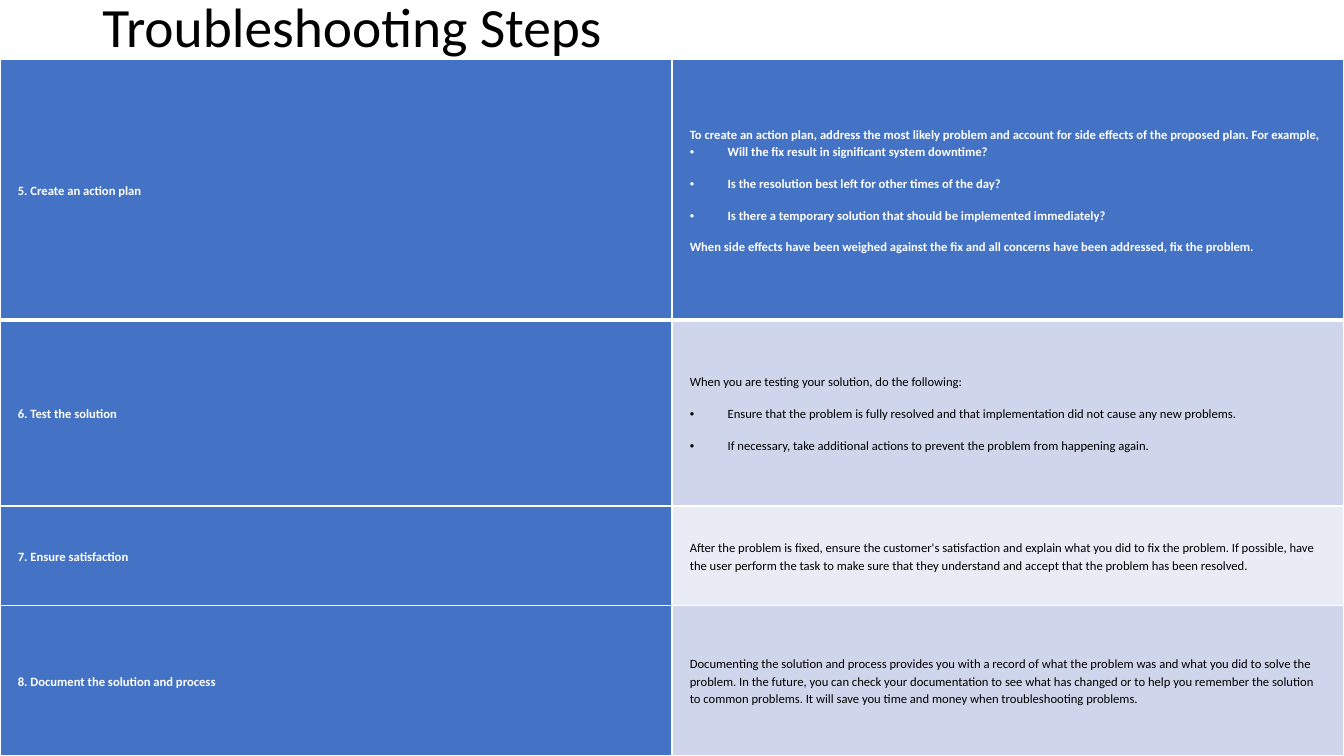
from lxml import etree
from pptx import Presentation
from pptx.dml.color import RGBColor
from pptx.enum.text import MSO_ANCHOR, MSO_AUTO_SIZE, PP_ALIGN
from pptx.oxml.ns import qn
from pptx.util import Emu, Pt

MIDDLE = MSO_ANCHOR.MIDDLE
NO_FIT = MSO_AUTO_SIZE.NONE
LEFT = PP_ALIGN.LEFT

FONT = "Calibri"
BLACK = RGBColor(0x00, 0x00, 0x00)
WHITE = RGBColor(0xFF, 0xFF, 0xFF)
BLUE = RGBColor(0x44, 0x72, 0xC4)
BAND_DARK = RGBColor(0xCF, 0xD5, 0xEA)
BAND_LIGHT = RGBColor(0xE9, 0xEB, 0xF5)

# Content: step name, then paragraphs of (text, is a bullet, points after)
TITLE = "Troubleshooting Steps"
STEPS = [
    ("5. Create an action plan", [
        ("To create an action plan, address the most likely problem and account for "
         "side effects of the proposed plan. For example,", False, 0),
        ("Will the fix result in significant system downtime?", True, 10),
        ("Is the resolution best left for other times of the day?", True, 10),
        ("Is there a temporary solution that should be implemented immediately?", True, 10),
        ("When side effects have been weighed against the fix and all concerns have "
         "been addressed, fix the problem.", False, 0),
    ]),
    ("6. Test the solution", [
        ("When you are testing your solution, do the following:", False, 10),
        ("Ensure that the problem is fully resolved and that implementation did not "
         "cause any new problems.", True, 10),
        ("If necessary, take additional actions to prevent the problem from happening "
         "again.", True, 10),
    ]),
    ("7. Ensure satisfaction", [
        ("After the problem is fixed, ensure the customer's satisfaction and explain "
         "what you did to fix the problem. If possible, have the user perform the task "
         "to make sure that they understand and accept that the problem has been "
         "resolved.", False, 0),
    ]),
    ("8. Document the solution and process", [
        ("Documenting the solution and process provides you with a record of what the "
         "problem was and what you did to solve the problem. In the future, you can "
         "check your documentation to see what has changed or to help you remember the "
         "solution to common problems. It will save you time and money when "
         "troubleshooting problems.", False, 0),
    ]),
]

# Layout in px, 96 to the inch
SLIDE_W, SLIDE_H = 1280, 720
TITLE_X, TITLE_W, TITLE_H = 88, 1104, 57
ROW_HEIGHTS = [248, 177, 95, 143]
MARGIN_X, MARGIN_Y = 17, 9
BULLET_INDENT = 36


def px(n):
    return Emu(n * 9525)


def style_runs(paragraph, size, color, bold):
    for run in paragraph.runs:
        run.font.name = FONT
        run.font.size = Pt(size)
        run.font.bold = bold
        run.font.color.rgb = color


def add_bullet(paragraph):
    props = paragraph._p.get_or_add_pPr()
    props.set("marL", str(px(BULLET_INDENT)))
    props.set("indent", str(-px(BULLET_INDENT)))
    etree.SubElement(props, qn("a:buFont"), typeface="Arial")
    etree.SubElement(props, qn("a:buChar"), char="•")


def set_borders(cell, top, bottom):
    props = cell._tc.get_or_add_tcPr()
    sides = [("a:lnL", 1), ("a:lnR", 1), ("a:lnT", top), ("a:lnB", bottom)]
    for position, (tag, width) in enumerate(sides):
        line = etree.Element(qn(tag), w=str(Pt(width)))
        fill = etree.SubElement(line, qn("a:solidFill"))
        etree.SubElement(fill, qn("a:srgbClr"), val=str(WHITE))
        props.insert(position, line)


def fill_cell(cell, paragraphs, background, color, bold):
    cell.fill.solid()
    cell.fill.fore_color.rgb = background
    cell.vertical_anchor = MIDDLE
    cell.margin_left = cell.margin_right = px(MARGIN_X)
    cell.margin_top = cell.margin_bottom = px(MARGIN_Y)
    frame = cell.text_frame
    frame.text = "\n".join(text for text, _, _ in paragraphs)
    for paragraph, (_, is_bullet, after) in zip(frame.paragraphs, paragraphs):
        paragraph.line_spacing = 1.15
        paragraph.space_after = Pt(after)
        if is_bullet:
            add_bullet(paragraph)
        style_runs(paragraph, 9, color, bold)


def main():
    prs = Presentation()
    prs.slide_width, prs.slide_height = px(SLIDE_W), px(SLIDE_H)
    slide = prs.slides.add_slide(prs.slide_layouts[5])

    # Title
    title = slide.shapes.title
    title.left, title.top = px(TITLE_X), px(0)
    title.width, title.height = px(TITLE_W), px(TITLE_H)
    heading = title.text_frame
    heading.text = TITLE
    heading.auto_size = NO_FIT
    heading.vertical_anchor = MIDDLE
    heading.paragraphs[0].alignment = LEFT
    heading.paragraphs[0].line_spacing = 0.9
    style_runs(heading.paragraphs[0], 39.6, BLACK, False)

    # Table of steps
    steps = slide.shapes.add_table(
        len(STEPS), 2, px(0), px(TITLE_H), px(SLIDE_W), px(sum(ROW_HEIGHTS))).table
    for column in steps.columns:
        column.width = px(SLIDE_W // 2)
    for i, (name, details) in enumerate(STEPS):
        steps.rows[i].height = px(ROW_HEIGHTS[i])
        name_cell, detail_cell = steps.cell(i, 0), steps.cell(i, 1)
        fill_cell(name_cell, [(name, False, 0)], BLUE, WHITE, True)
        if i == 0:
            fill_cell(detail_cell, details, BLUE, WHITE, True)
        else:
            band = BAND_DARK if i % 2 else BAND_LIGHT
            fill_cell(detail_cell, details, band, BLACK, False)
        for cell in (name_cell, detail_cell):
            set_borders(cell, top=3 if i == 1 else 1, bottom=3 if i == 0 else 1)

    prs.save("out.pptx")


if __name__ == "__main__":
    main()
